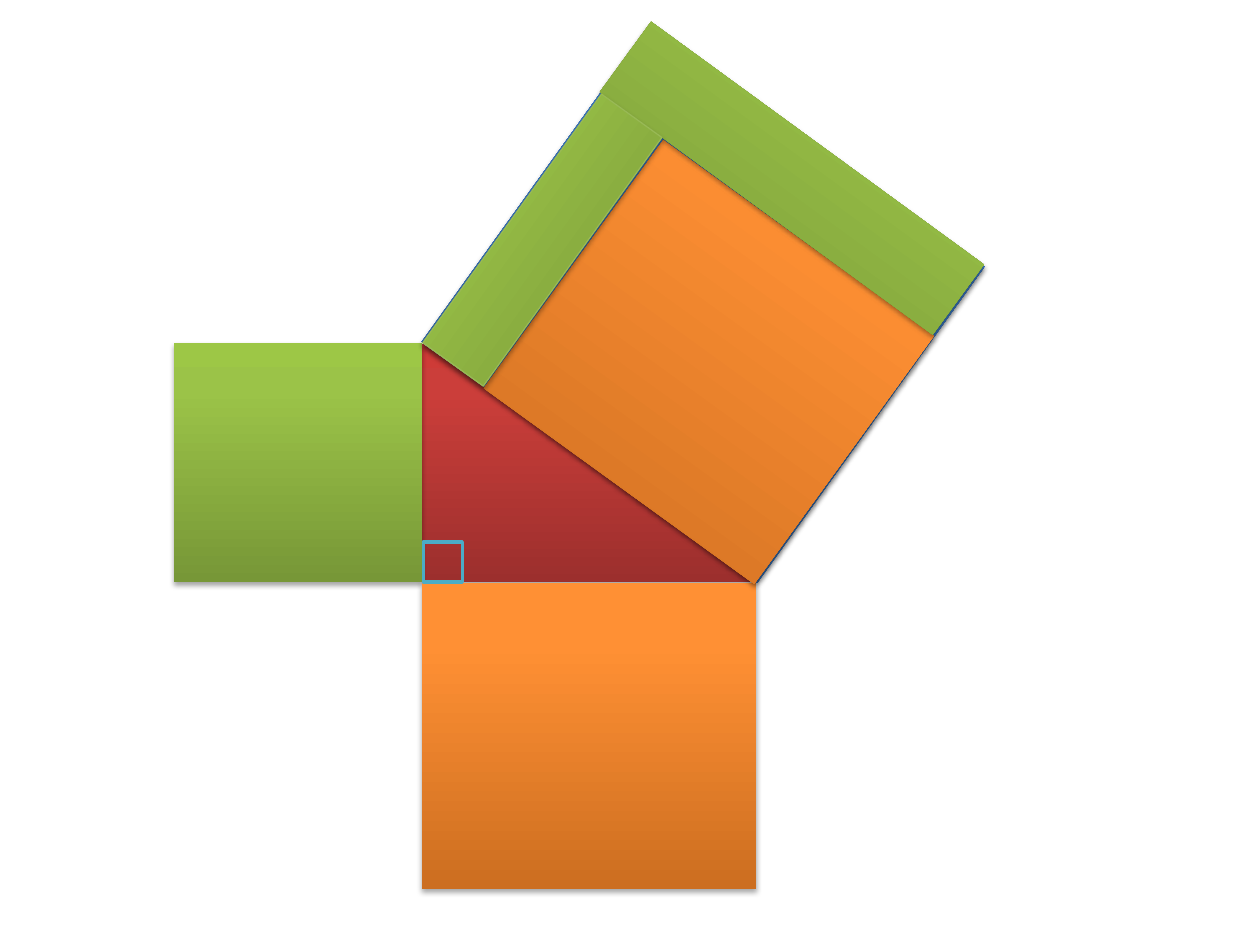
from copy import deepcopy

from lxml.etree import SubElement
from pptx import Presentation
from pptx.dml.color import RGBColor
from pptx.enum.shapes import MSO_SHAPE
from pptx.oxml.ns import qn
from pptx.util import Inches, Pt

RED = (RGBColor(0x9C, 0x2F, 0x2D), RGBColor(0xCB, 0x3E, 0x3A), RGBColor(0xCE, 0x3B, 0x37))
GREEN = (RGBColor(0x77, 0x97, 0x37), RGBColor(0x9B, 0xC3, 0x48), RGBColor(0x9D, 0xC7, 0x46))
ORANGE = (RGBColor(0xCC, 0x6E, 0x20), RGBColor(0xFF, 0x90, 0x34), RGBColor(0xFF, 0x91, 0x36))
BLUE = (RGBColor(0x2F, 0x5F, 0x99), RGBColor(0x3D, 0x7C, 0xC7), RGBColor(0x3A, 0x7C, 0xCB))
GREEN_EDGE = RGBColor(0x98, 0xB9, 0x55)
ANGLE_MARK = RGBColor(0x4B, 0xAC, 0xC6)
STOP_POSITIONS = (0, 0.8, 1)


def add_outline(page, kind, bounds, edge=None, width=0.75):
    shape = page.shapes.add_shape(kind, *map(Inches, bounds))
    shape.shadow.inherit = False
    shape.fill.background()
    if edge is None:
        shape.line.fill.background()
    else:
        shape.line.color.rgb = edge
        shape.line.width = Pt(width)
    return shape


def set_gradient(shape, colors):
    shape.fill.gradient()
    shape.fill.gradient_angle = 90
    stop_list = shape._element.spPr.find(".//" + qn("a:gsLst"))
    stop_list.append(deepcopy(stop_list[-1]))
    for stop, color, position in zip(shape.fill.gradient_stops, colors, STOP_POSITIONS):
        stop.color.rgb = color
        stop.position = position


def add_shadow(shape):
    effects = shape._element.spPr.find(qn("a:effectLst"))
    shadow = SubElement(effects, qn("a:outerShdw"), blurRad=str(Pt(3.1)),
                        dist=str(Pt(1.8)), dir="5400000", rotWithShape="0")
    color = SubElement(shadow, qn("a:srgbClr"), val="000000")
    SubElement(color, qn("a:alpha"), val="35000")


def add_area(page, bounds, colors, rotation=0, kind=MSO_SHAPE.RECTANGLE, edge=None):
    shape = add_outline(page, kind, bounds, edge)
    set_gradient(shape, colors)
    add_shadow(shape)
    shape.rotation = rotation


def main():
    deck = Presentation()
    deck.slide_width, deck.slide_height = Inches(10), Inches(7.5)
    page = deck.slides.add_slide(deck.slide_layouts[6])

    add_area(page, (3.35, 2.73, 2.65, 1.89), RED, kind=MSO_SHAPE.RIGHT_TRIANGLE)
    add_area(page, (1.38, 2.72, 1.97, 1.9), GREEN)
    add_area(page, (3.35, 4.63, 2.65, 2.43), ORANGE)
    add_area(page, (3.94, 0.87, 3.28, 3.09), BLUE, 35.7)
    add_area(page, (4.3, 1.66, 2.65, 2.43), ORANGE, 35.9)
    add_area(page, (4.65, 1.07, 3.27, 0.69), GREEN, 36.1)
    add_area(page, (3.09, 1.61, 2.43, 0.59), GREEN, 305.7, edge=GREEN_EDGE)
    add_outline(page, MSO_SHAPE.RECTANGLE, (3.36, 4.3, 0.31, 0.32), ANGLE_MARK, 2)

    deck.save("out.pptx")


if __name__ == "__main__":
    main()
